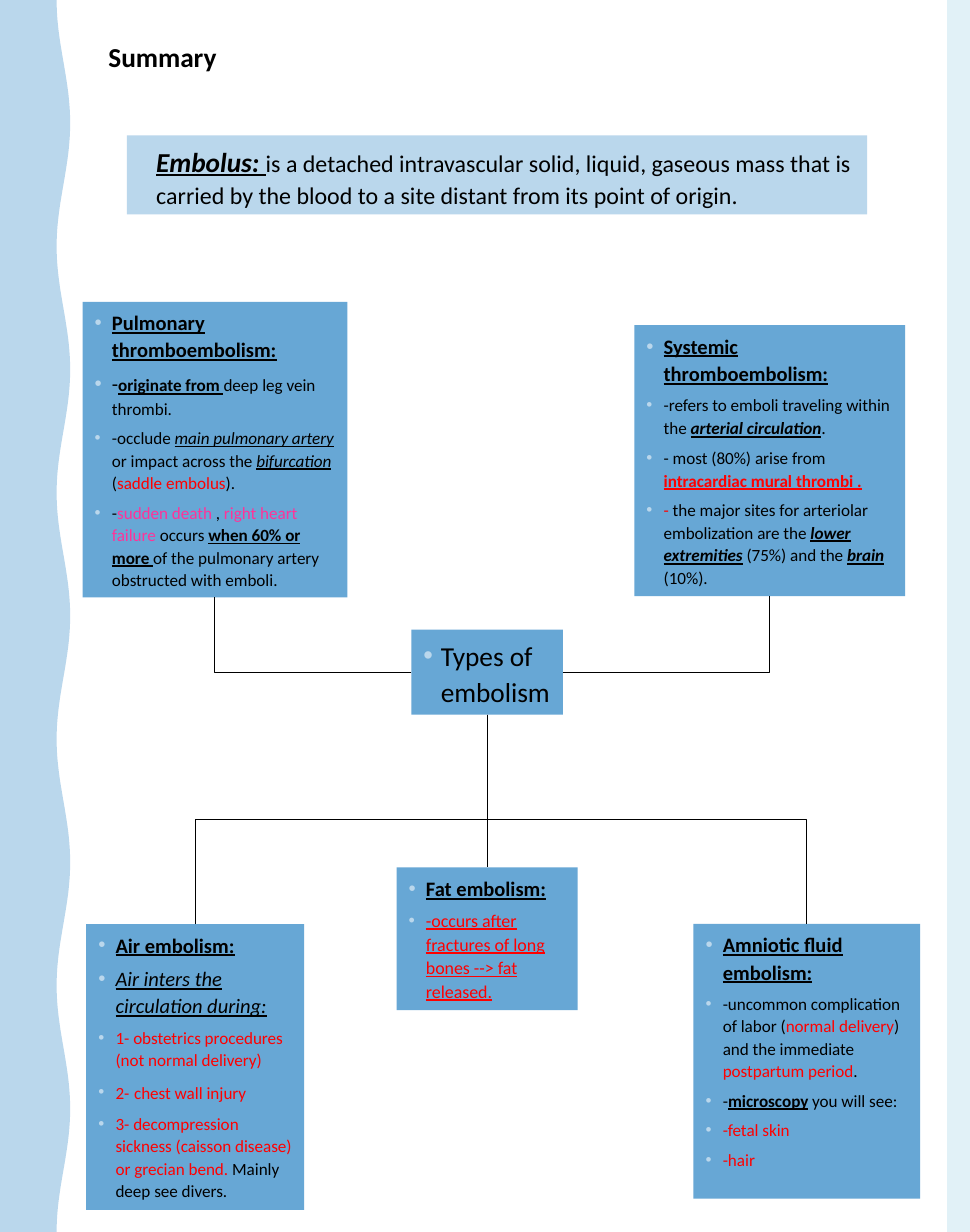
import math
from dataclasses import dataclass

from lxml import etree
from pptx import Presentation
from pptx import util as u
from pptx.dml.color import RGBColor
from pptx.enum import shapes, text
from pptx.oxml import ns

Inches = u.Inches
TOP, LEFT, BOTTOM, RIGHT = range(4)


@dataclass(frozen=True)
class Theme:
    font: str = "Calibri"
    ink: str = "000000"
    red: str = "FF0000"
    pink: str = "FF3399"
    box: str = "67A7D5"
    pale: str = "BAD7EC"
    edge: str = "E1F1F7"
    title: float = 16
    lead: float = 14
    heading: float = 12
    medium: float = 10.5
    body: float = 10


THEME = Theme()
PAGE_WIDTH, PAGE_HEIGHT = 63 / 8, 10


def run(words, marks="", size=THEME.body, color=THEME.ink):
    """Describe a run; marks holds any of b, i and u."""
    return words, {"bold": "b" in marks, "italic": "i" in marks,
                   "underline": "u" in marks, "size": u.Pt(size),
                   "name": THEME.font}, color


def heading(words, marks="bu"):
    return [run(words, marks, THEME.heading)]


def red(words, marks="", size=THEME.body):
    return run(words, marks, size, THEME.red)


def pink(words):
    return run(words, color=THEME.pink)


DEFINITION = [[
    run("Embolus: ", "biu", THEME.title),
    run("is a detached intravascular solid, liquid, gaseous mass that is carried "
        "by the blood to a site distant from its point of origin.", size=THEME.lead)]]

# name: (left, top, width, height), paragraphs
BOXES = {
    "types": ((3.34, 5.11, 1.23, 0.69), [
        [run("Types of embolism", size=THEME.title)]]),
    "pulmonary": ((0.67, 2.45, 2.15, 2.4), [
        heading("Pulmonary thromboembolism:"),
        [run("-", size=THEME.heading), run("originate from ", "bu"),
         run("deep leg vein thrombi.")],
        [run("-occlude "), run("main pulmonary artery ", "iu"),
         run("or impact across the "), run("bifurcation", "iu"), run(" ("),
         red("saddle embolus"), run(").")],
        [run("-"), pink("sudden death "), run(", "), pink("right heart failure "),
         run("occurs "), run("when 60% or more ", "bu"),
         run("of the pulmonary artery obstructed with emboli.")]]),
    "systemic": ((5.15, 2.64, 2.2, 2.2), [
        heading("Systemic thromboembolism:"),
        [run("-refers to emboli traveling within the "),
         run("arterial circulation", "biu"), run(".", size=THEME.medium)],
        [run("- most (80%) arise from "), red("intracardiac mural thrombi .", "bu")],
        [red("- "), run("the major sites for arteriolar embolization are the "),
         run("lower extremities", "biu"), run(" (75%) and the "),
         run("brain", "biu"), run(" (10%).")]]),
    "fat": ((3.22, 7.04, 1.47, 1.16), [
        heading("Fat embolism:"),
        [red("-occurs after fractures of long bones --> fat released.", "u",
             THEME.medium)]]),
    "air": ((0.7, 7.5, 1.77, 2.32), [
        heading("Air embolism:"),
        heading("Air inters the circulation during:", "iu"),
        [red("1- obstetrics procedures (not normal delivery)")],
        [red("2-"), red(" ", size=THEME.heading), red("chest wall injury")],
        [red("3- decompression sickness (caisson disease) or grecian bend. "),
         run("Mainly deep see divers.")]]),
    "amniotic": ((5.63, 7.5, 1.84, 2.23), [
        heading("Amniotic fluid embolism:"),
        [run("-uncommon complication of labor ("), red("normal delivery"),
         run(") and the immediate "), red("postpartum period"), run(".")],
        [run("-"), run("microscopy", "bu"), run(" you will see:")],
        [red("-fetal skin")],
        [red("-hair")]]),
}


def paint(shape, color):
    shape.shadow.inherit = False
    shape.fill.solid()
    shape.fill.fore_color.rgb = RGBColor.from_string(color)
    shape.line.fill.background()


def add_runs(para, runs):
    for words, formats, color in runs:
        span = para.add_run()
        span.text = words
        for name, value in formats.items():
            setattr(span.font, name, value)
        span.font.color.rgb = RGBColor.from_string(color)


def set_bullet(para):
    properties = para._p.get_or_add_pPr()
    indent = Inches(0.14)
    properties.set("marL", str(indent))
    properties.set("indent", str(-indent))
    tint = etree.SubElement(properties, ns.qn("a:buClr"))
    etree.SubElement(tint, ns.qn("a:srgbClr"), val=THEME.pale)
    etree.SubElement(properties, ns.qn("a:buFont"), typeface="Arial")
    etree.SubElement(properties, ns.qn("a:buChar"), char="•")


def set_frame(frame):
    formats = {"word_wrap": True, "auto_size": text.MSO_AUTO_SIZE.NONE,
               "vertical_anchor": text.MSO_ANCHOR.TOP}
    for name, value in formats.items():
        setattr(frame, name, value)


def add_text_box(page, bounds, paragraphs, color):
    box = page.shapes.add_shape(shapes.MSO_SHAPE.RECTANGLE, *map(Inches, bounds))
    paint(box, color)
    frame = box.text_frame
    set_frame(frame)
    formats = {"alignment": text.PP_ALIGN.LEFT, "line_spacing": 1.1,
               "space_before": u.Pt(4)}
    for index, runs in enumerate(paragraphs):
        para = frame.add_paragraph() if index else frame.paragraphs[0]
        for name, value in formats.items():
            setattr(para, name, value)
        set_bullet(para)
        add_runs(para, runs)
    return box


def add_wave(page, width, height):
    """Fill a left band whose right edge swings once every two inches."""
    inner, step = 0.46, 0.05
    swing = (width - inner) / 2
    edge = [(inner + swing * (1 - math.cos(math.pi * y)), y)
            for y in (index * step for index in range(round(height / step) + 1))]
    builder = page.shapes.build_freeform(0, 0)
    builder.add_line_segments([(Inches(x), Inches(y)) for x, y in edge]
                              + [(0, Inches(height))], close=True)
    paint(builder.convert_to_shape(), THEME.pale)


def add_background(page):
    add_wave(page, 0.57, PAGE_HEIGHT)
    strip = page.shapes.add_shape(shapes.MSO_SHAPE.RECTANGLE, Inches(7.69), 0,
                                  Inches(PAGE_WIDTH - 7.69), Inches(PAGE_HEIGHT))
    paint(strip, THEME.edge)


def add_title(page, bounds):
    title = page.shapes.title
    for name, value in zip(("left", "top", "width", "height"), bounds):
        setattr(title, name, Inches(value))
    set_frame(title.text_frame)
    para = title.text_frame.paragraphs[0]
    formats = {"alignment": text.PP_ALIGN.LEFT, "line_spacing": 1.05,
               "space_before": u.Pt(0), "space_after": u.Pt(9)}
    for name, value in formats.items():
        setattr(para, name, value)
    add_runs(para, [run("Summary", "b", THEME.title)])


def join(page, start, start_side, end, end_side, kind=shapes.MSO_CONNECTOR.ELBOW):
    link = page.shapes.add_connector(kind, 0, 0, 0, 0)
    link.begin_connect(start, start_side)
    link.end_connect(end, end_side)
    link.line.width = u.Pt(0.5)
    link.line.color.rgb = RGBColor.from_string(THEME.ink)
    etree.SubElement(link._element.spPr, ns.qn("a:effectLst"))
    return link


def join_corner(page, start, side, end):
    """Leave sideways, turn once and reach the bottom of the end box."""
    link = join(page, start, side, end, BOTTOM)
    link._element.spPr.find(ns.qn("a:prstGeom")).set("prst", "bentConnector2")


def join_down(page, start, end):
    """Go down, across at half height, and down to the top of the end box."""
    link = join(page, start, BOTTOM, end, TOP)
    run_x, run_y = link.end_x - link.begin_x, link.end_y - link.begin_y
    middle_x = (link.begin_x + link.end_x) // 2
    middle_y = (link.begin_y + link.end_y) // 2
    frame = link._element.spPr.find(ns.qn("a:xfrm"))
    for name in ("flipH", "flipV"):
        frame.attrib.pop(name, None)
    frame.set("rot", str((90 if run_x < 0 else 270) * 60000))
    if run_x > 0:
        frame.set("flipH", "1")
    link.left, link.top = middle_x - run_y // 2, middle_y - abs(run_x) // 2
    link.width, link.height = run_y, abs(run_x)


def add_diagram(page):
    boxes = {name: add_text_box(page, bounds, paragraphs, THEME.box)
             for name, (bounds, paragraphs) in BOXES.items()}
    hub = boxes["types"]
    join_corner(page, hub, LEFT, boxes["pulmonary"])
    join_corner(page, hub, RIGHT, boxes["systemic"])
    join(page, hub, BOTTOM, boxes["fat"], TOP, shapes.MSO_CONNECTOR.STRAIGHT)
    for name in ("air", "amniotic"):
        join_down(page, hub, boxes[name])


def main():
    deck = Presentation()
    deck.slide_width, deck.slide_height = Inches(PAGE_WIDTH), Inches(PAGE_HEIGHT)
    page = deck.slides.add_slide(deck.slide_layouts.get_by_name("Title Only"))
    add_background(page)
    add_title(page, (0.78, 0.26, 6.19, 0.37))
    add_text_box(page, (1.03, 1.1, 6.01, 0.64), DEFINITION, THEME.pale)
    add_diagram(page)
    deck.save("out.pptx")


if __name__ == "__main__":
    main()
